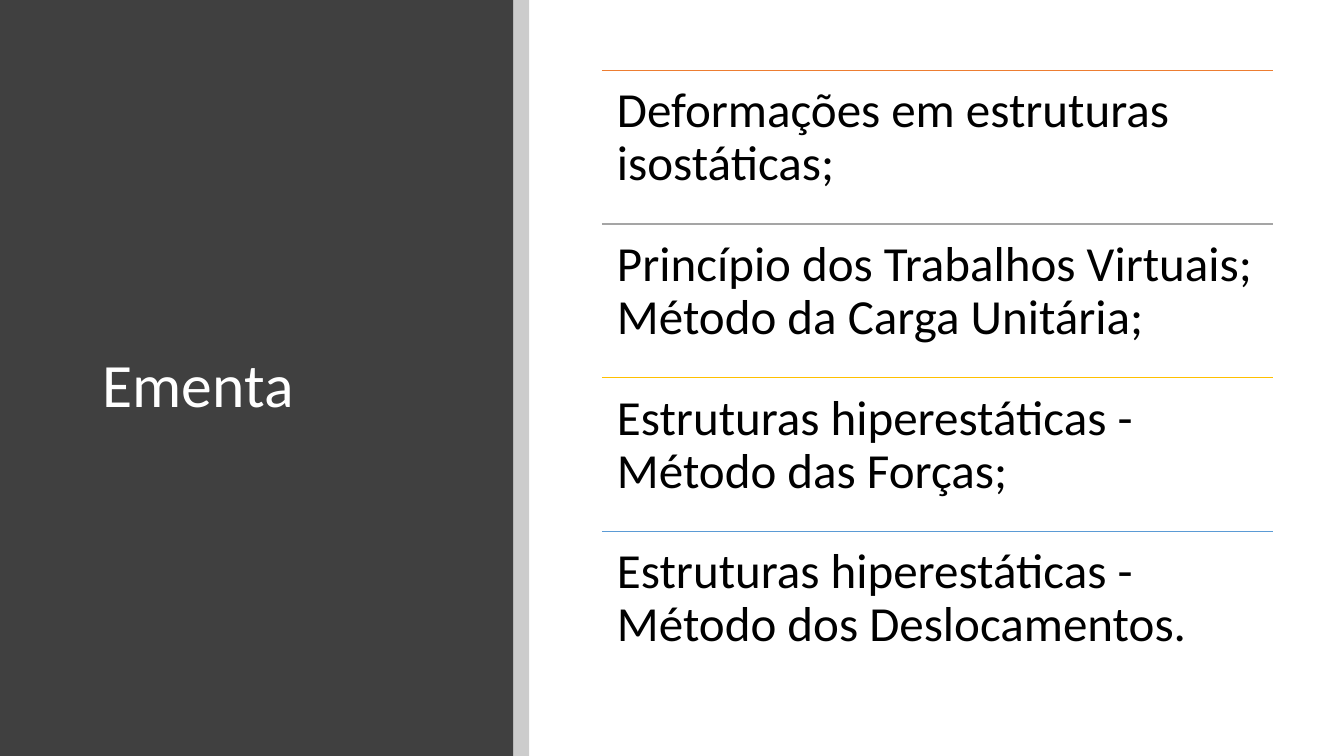
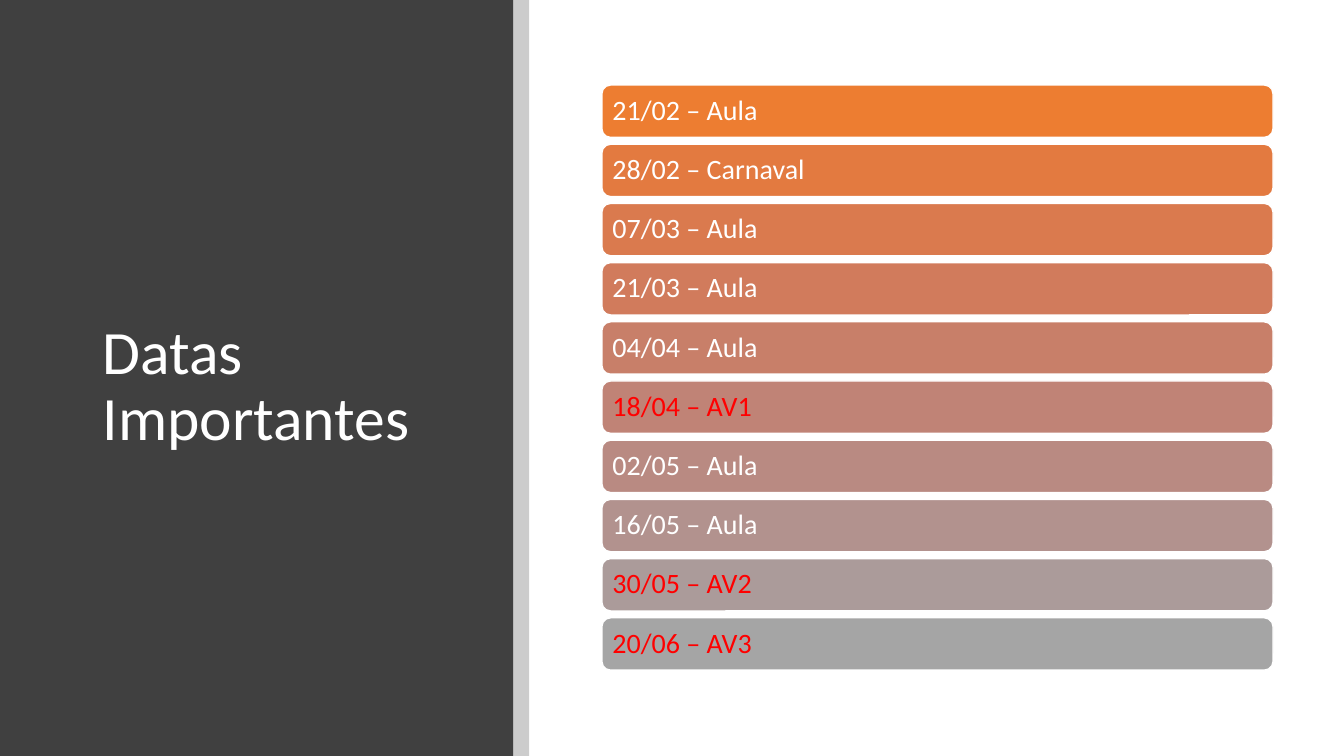
import colorsys

import pptx
import pptx.dml.color
import pptx.enum.shapes
import pptx.enum.text
import pptx.oxml
import pptx.oxml.ns
import pptx.util

RGBColor = pptx.dml.color.RGBColor
BLACK = RGBColor(0x00, 0x00, 0x00)
WHITE = RGBColor(0xFF, 0xFF, 0xFF)
RED = RGBColor(0xFF, 0x00, 0x00)
CHARCOAL = RGBColor(0x40, 0x40, 0x40)
ORANGE = RGBColor(0xED, 0x7D, 0x31)
GRAY = RGBColor(0xA5, 0xA5, 0xA5)
GOLD = RGBColor(0xFF, 0xC0, 0x00)
BLUE = RGBColor(0x5B, 0x9B, 0xD5)

FONT = "Calibri"
PANEL_WIDTH = 38.18
CONTENT_LEFT = 44.78
CONTENT_WIDTH = 49.94
TOPIC_TOP = 9.33
TOPIC_PITCH = 20.32
DATE_TOP = 11.25
DATE_HEIGHT = 6.93
DATE_PITCH = 7.83

TOPICS = [
    ("Deformações em estruturas isostáticas;", ORANGE),
    ("Princípio dos Trabalhos Virtuais; Método da Carga Unitária;", GRAY),
    ("Estruturas hiperestáticas - Método das Forças;", GOLD),
    ("Estruturas hiperestáticas - Método dos Deslocamentos.", BLUE),
]
DATES = [
    ("21/02", "Aula"),
    ("28/02", "Carnaval"),
    ("07/03", "Aula"),
    ("21/03", "Aula"),
    ("04/04", "Aula"),
    ("18/04", "AV1"),
    ("02/05", "Aula"),
    ("16/05", "Aula"),
    ("30/05", "AV2"),
    ("20/06", "AV3"),
]


def blend(start, end, share):
    """Mix two colours by hue, lightness and saturation."""
    first, last = (colorsys.rgb_to_hls(*(c / 255 for c in color)) for color in (start, end))
    mixed = (a + (b - a) * share for a, b in zip(first, last))
    return RGBColor(*(round(c * 255) for c in colorsys.hls_to_rgb(*mixed)))


class Deck:
    """Holds the style and the current slide; lengths are percent of the slide."""

    def __init__(self):
        self.presentation = pptx.Presentation()
        self.presentation.slide_width = pptx.util.Inches(13.33)
        self.presentation.slide_height = pptx.util.Inches(7.5)
        self.slide = None

    def across(self, share):
        return round(self.presentation.slide_width * share / 100)

    def down(self, share):
        return round(self.presentation.slide_height * share / 100)

    def area(self, left, top, width, height):
        return self.across(left), self.down(top), self.across(width), self.down(height)

    def start_slide(self, title):
        self.slide = self.presentation.slides.add_slide(self.presentation.slide_layouts[6])
        rectangle = pptx.enum.shapes.MSO_SHAPE.RECTANGLE
        self.block(rectangle, (0, 0, PANEL_WIDTH, 100), CHARCOAL)
        self.text_box(title, (6.9, 11.87, 27.38, 78.8), 44, WHITE, (0.1, 0.05), True)
        strip = self.block(rectangle, (PANEL_WIDTH, 0, 1.2, 100), BLACK)
        color = strip._element.spPr.find(".//" + pptx.oxml.ns.qn("a:srgbClr"))
        color.append(pptx.oxml.parse_xml(
            f'<a:alpha {pptx.oxml.ns.nsdecls("a")} val="20000"/>'))

    def block(self, preset, place, color):
        shape = self.slide.shapes.add_shape(preset, *self.area(*place))
        shape.shadow.inherit = False
        shape.fill.solid()
        shape.fill.fore_color.rgb = color
        shape.line.fill.background()
        return shape

    def set_text(self, shape, text, size, color, insets, middle):
        frame = shape.text_frame
        frame.word_wrap = True
        anchor = pptx.enum.text.MSO_ANCHOR
        frame.vertical_anchor = anchor.MIDDLE if middle else anchor.TOP
        side, edge = (pptx.util.Inches(inset) for inset in insets)
        frame.margin_left = frame.margin_right = side
        frame.margin_top = frame.margin_bottom = edge
        paragraph = frame.paragraphs[0]
        paragraph.alignment = pptx.enum.text.PP_ALIGN.LEFT
        paragraph.line_spacing = 0.9
        run = paragraph.add_run()
        run.text = text
        run.font.name = FONT
        run.font.size = pptx.util.Pt(size)
        run.font.color.rgb = color

    def text_box(self, text, place, size, color, insets, middle=False):
        shape = self.slide.shapes.add_textbox(*self.area(*place))
        self.set_text(shape, text, size, color, insets, middle)

    def rule(self, left, top, width, color):
        line = self.slide.shapes.add_connector(
            pptx.enum.shapes.MSO_CONNECTOR.STRAIGHT,
            self.across(left), self.down(top), self.across(left + width), self.down(top))
        line.line.color.rgb = color
        line.line.width = pptx.util.Pt(1)
        line._element.spPr.append(pptx.oxml.parse_xml(
            f'<a:effectLst {pptx.oxml.ns.nsdecls("a")}/>'))

    def topic(self, row, text, color):
        top = TOPIC_TOP + row * TOPIC_PITCH
        self.rule(CONTENT_LEFT, top, CONTENT_WIDTH, color)
        place = (CONTENT_LEFT, top, CONTENT_WIDTH, TOPIC_PITCH)
        self.text_box(text, place, 35, BLACK, (0.15, 0.15))

    def date_bar(self, row, text, fill, color):
        place = (CONTENT_LEFT, DATE_TOP + row * DATE_PITCH, CONTENT_WIDTH, DATE_HEIGHT)
        bar = self.block(pptx.enum.shapes.MSO_SHAPE.ROUNDED_RECTANGLE, place, fill)
        bar.line.color.rgb = WHITE
        bar.line.width = pptx.util.Pt(1)
        self.set_text(bar, text, 20, color, (0.08, 0.08), True)


def main():
    deck = Deck()
    deck.start_slide("Ementa")
    for row, (text, color) in enumerate(TOPICS):
        deck.topic(row, text, color)

    deck.start_slide("Datas Importantes")
    for row, (day, event) in enumerate(DATES):
        fill = blend(ORANGE, GRAY, row / (len(DATES) - 1))
        color = RED if event.startswith("AV") else WHITE
        deck.date_bar(row, f"{day} – {event}", fill, color)
    deck.presentation.save("out.pptx")


if __name__ == "__main__":
    main()
